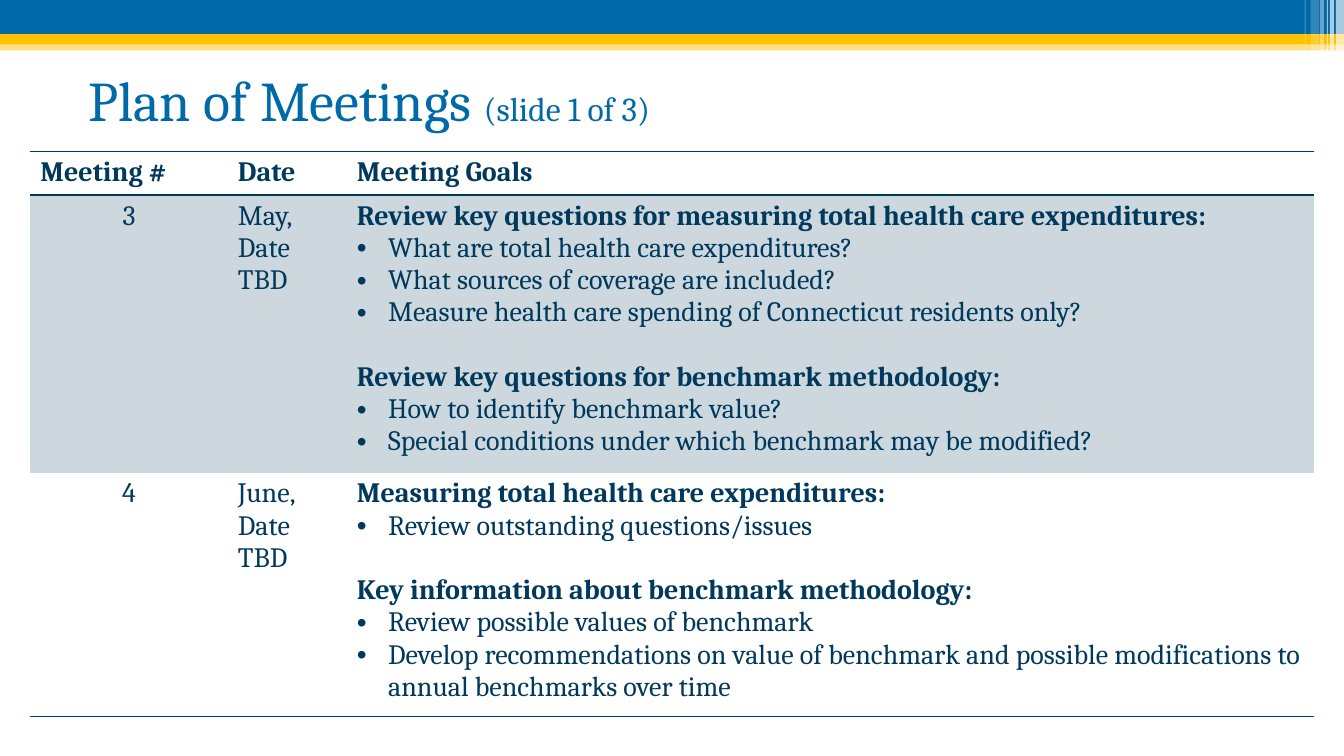
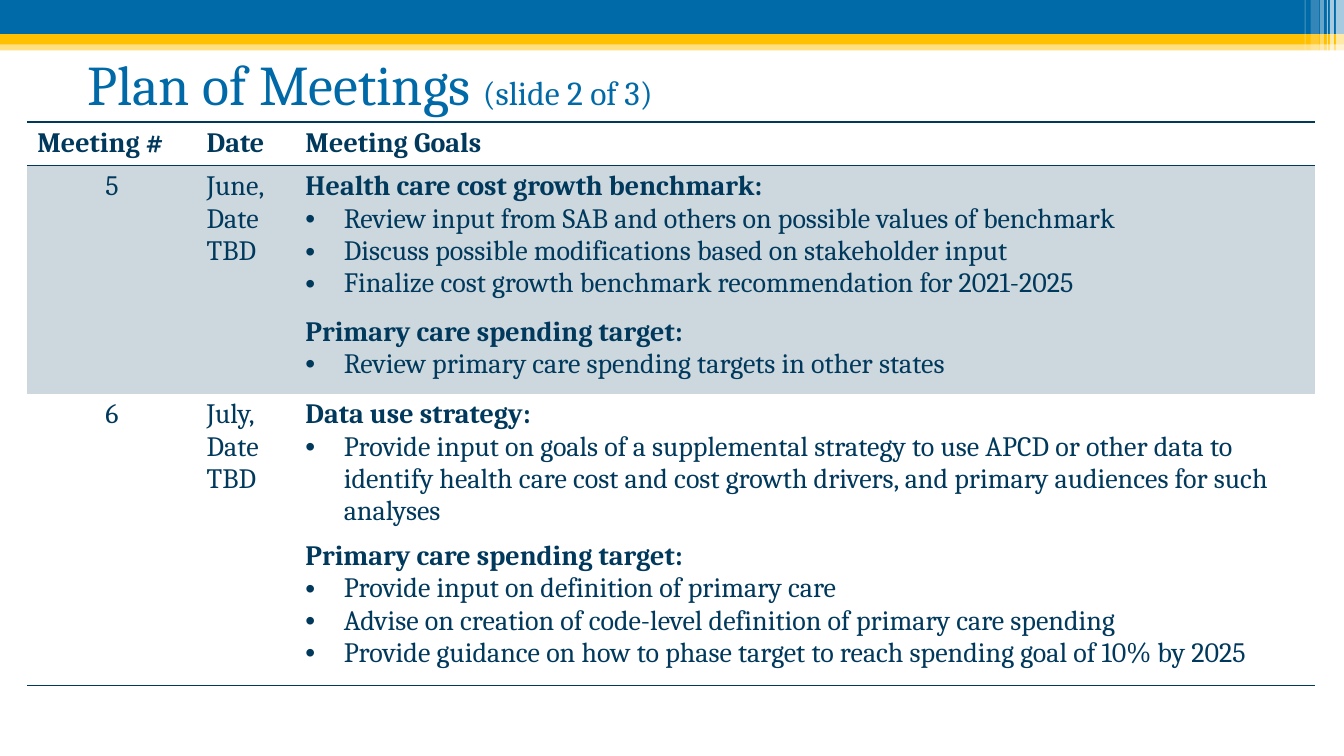
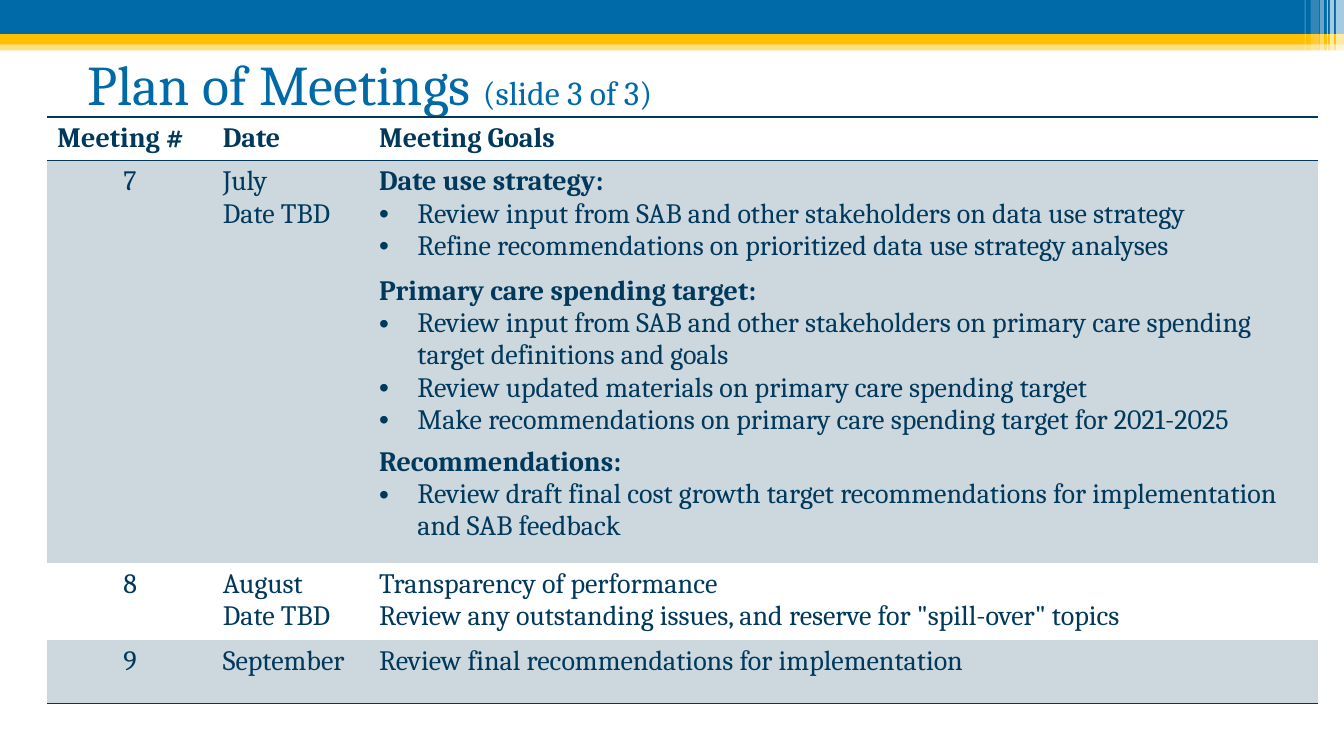
"""Build the three Plan of Meetings slides."""
from lxml import etree
from pptx import Presentation
from pptx import util as u
from pptx.dml import color as c
from pptx.enum import shapes, text
from pptx.oxml import ns

BLUE = c.RGBColor(0x00, 0x69, 0xA7)
GOLD = c.RGBColor(0xFF, 0xC0, 0x00)
WHITE = c.RGBColor(0xFF, 0xFF, 0xFF)
NAVY = c.RGBColor(0x00, 0x39, 0x5C)
SHADE = c.RGBColor(0xCC, 0xD7, 0xDE)

TITLE = {"name": "Cambria", "size": u.Pt(40), "color": BLUE}
SUBTITLE = {**TITLE, "size": u.Pt(24)}
BODY = {"name": "Cambria", "size": u.Pt(20), "color": NAVY, "bold": False}
HEADING = {**BODY, "bold": True}

NO_STYLE = "{2D5ABB26-0587-4C30-8999-92F81FD0307C}"
WIDTH = 13.33
BANDS = [(0.4, 0.1, GOLD, 50), (0, 0.34, BLUE, 100), (0.34, 0.1, GOLD, 100)]
STRIPES = [(13.25, 0.08, 0.68, 65), (13.19, 0.04, 0.68, 65),
           (13.16, 0.01, 0.68, 60), (13.09, 0.04, 0.68, 40),
           (13, 0.08, 0.64, 20), (12.94, 0.01, 0.64, 30)]

HEADER = ("Meeting #", ["Date"], [(0, "Meeting Goals", [])])

SLIDES = [
    {"title": (0.78, 0.4), "at": (0.3, 1.5), "indent": 0.31,
     "cols": [1.96, 1.18, 9.59], "heights": [0.42, 2.66, 2.34],
     "rows": [
         ("3", ["May,", "Date TBD"], [
             (0, "Review key questions for measuring total health care expenditures:", [
                 "What are total health care expenditures?",
                 "What sources of coverage are included?",
                 "Measure health care spending of Connecticut residents only?"]),
             (23, "Review key questions for benchmark methodology:", [
                 "How to identify benchmark value?",
                 "Special conditions under which benchmark may be modified?"])]),
         ("4", ["June,", "Date", "TBD"], [
             (0, "Measuring total health care expenditures:", [
                 "Review outstanding questions/issues"]),
             (23, "Key information about benchmark methodology:", [
                 "Review possible values of benchmark",
                 "Develop recommendations on value of benchmark and possible "
                 "modifications to annual benchmarks over time"])])]},
    {"title": (0.77, 0.24), "at": (0.27, 1.21), "indent": 0.38,
     "cols": [1.68, 0.98, 10.11], "heights": [0.42, 2.18, 2.79],
     "rows": [
         ("5", ["June,", "Date", "TBD"], [
             (0, "Health care cost growth benchmark:", [
                 "Review input from SAB and others on possible values of benchmark",
                 "Discuss possible modifications based on stakeholder input",
                 "Finalize cost growth benchmark recommendation for 2021-2025"]),
             (11.5, "Primary care spending target:", [
                 "Review primary care spending targets in other states"])]),
         ("6", ["July,", "Date", "TBD"], [
             (0, "Data use strategy:", [
                 "Provide input on goals of a supplemental strategy to use APCD or "
                 "other data to identify health care cost and cost growth drivers, "
                 "and primary audiences for such analyses"]),
             (9, "Primary care spending target:", [
                 "Provide input on definition of primary care",
                 "Advise on creation of code-level definition of primary care spending",
                 "Provide guidance on how to phase target to reach spending goal "
                 "of 10% by 2025"])])]},
    {"title": (0.77, 0.24), "at": (0.47, 1.16), "indent": 0.38,
     "cols": [1.64, 1.55, 9.41], "heights": [0.42, 3.84, 0.75, 0.63],
     "rows": [
         ("7", ["July", "Date TBD"], [
             (0, "Date use strategy:", [
                 "Review input from SAB and other stakeholders on data use strategy",
                 "Refine recommendations on prioritized data use strategy analyses"]),
             (9, "Primary care spending target:", [
                 "Review input from SAB and other stakeholders on primary care "
                 "spending target definitions and goals",
                 "Review updated materials on primary care spending target",
                 "Make recommendations on primary care spending target for 2021-2025"]),
             (7, "Recommendations:", [
                 "Review draft final cost growth target recommendations for "
                 "implementation and SAB feedback"])]),
         ("8", ["August", "Date TBD"], [
             "Transparency of performance",
             'Review any outstanding issues, and reserve for "spill-over" topics']),
         ("9", ["September"], ["Review final recommendations for implementation"])]},
]


def add_run(p, words, fmt):
    """Add a run and set its font from a dict."""
    r = p.add_run()
    r.text = words
    for key, value in fmt.items():
        if key == "color":
            r.font.color.rgb = value
        else:
            setattr(r.font, key, value)


def add_bar(s, left, top, width, height, color, opacity):
    """Add a plain rectangle with the given opacity in percent."""
    sp = s.shapes.add_shape(shapes.MSO_SHAPE.RECTANGLE,
                            *map(u.Inches, (left, top, width, height)))
    sp.shadow.inherit = False
    sp.line.fill.background()
    sp.fill.solid()
    sp.fill.fore_color.rgb = color
    if opacity < 100:
        tone = sp._element.spPr.find(ns.qn("a:solidFill"))[0]
        etree.SubElement(tone, ns.qn("a:alpha"), val=str(opacity * 1000))


def add_bands(s):
    """Draw the top bands and the pale stripes at their right end."""
    for top, height, color, opacity in BANDS:
        add_bar(s, 0, top, WIDTH, height, color, opacity)
    for left, width, height, opacity in STRIPES:
        add_bar(s, left, 0, width, height, WHITE, opacity)


def add_title(s, left, top, number):
    """Add the title with its slide count."""
    tf = s.shapes.add_textbox(*map(u.Inches, (left, top, 12, 1.17))).text_frame
    tf.word_wrap = True
    tf.vertical_anchor = text.MSO_ANCHOR.MIDDLE
    p = tf.paragraphs[0]
    add_run(p, "Plan of Meetings ", TITLE)
    add_run(p, f"(slide {number} of {len(SLIDES)})", SUBTITLE)


def add_bullet(p, indent):
    """Give a paragraph a hanging bullet."""
    pPr = p._p.get_or_add_pPr()
    pPr.set("marL", str(u.Inches(indent)))
    pPr.set("indent", str(-u.Inches(indent)))
    etree.SubElement(pPr, ns.qn("a:buFont"), typeface="Arial")
    etree.SubElement(pPr, ns.qn("a:buChar"), char="•")


def write_cell(cell, items, fmt, indent):
    """Write plain lines, or sections of gap, heading and bullets."""
    lines = []
    for item in items:
        if isinstance(item, str):
            lines.append((item, fmt, 0, False))
        else:
            gap, heading, bullets = item
            lines.append((heading, HEADING, gap, False))
            lines += [(bullet, BODY, 0, True) for bullet in bullets]
    tf = cell.text_frame
    for i, (words, style, gap, bulleted) in enumerate(lines):
        p = tf.add_paragraph() if i else tf.paragraphs[0]
        if bulleted:
            add_bullet(p, indent)
        if gap:
            p.space_before = u.Pt(gap)
        add_run(p, words, style)


def add_border(cell, side):
    """Draw a one-point navy line on one side of a cell."""
    tcPr = cell._tc.get_or_add_tcPr()
    ln = etree.SubElement(tcPr, ns.qn(f"a:{side}"), w=str(u.Pt(1)))
    fill = etree.SubElement(ln, ns.qn("a:solidFill"))
    etree.SubElement(fill, ns.qn("a:srgbClr"), val=str(NAVY))


def add_meetings(s, at, cols, heights, rows, indent):
    """Add the table of meetings, with every other row shaded."""
    rows = [HEADER, *rows]
    frame = s.shapes.add_table(len(rows), len(cols), *map(
        u.Inches, (*at, sum(cols), sum(heights))))
    table = frame.table
    table._tbl.tblPr.find(ns.qn("a:tableStyleId")).text = NO_STYLE
    for column, width in zip(table.columns, cols):
        column.width = u.Inches(width)
    for i, (number, dates, goals) in enumerate(rows):
        table.rows[i].height = u.Inches(heights[i])
        for j, items in enumerate(([number], dates, goals)):
            cell = table.cell(i, j)
            write_cell(cell, items, BODY if i else HEADING, indent)
            if i == 0:
                add_border(cell, "lnT")
            if i in (0, len(rows) - 1):
                add_border(cell, "lnB")
            if i % 2:
                cell.fill.solid()
                cell.fill.fore_color.rgb = SHADE
            else:
                cell.fill.background()
        if i:
            p = table.cell(i, 0).text_frame.paragraphs[0]
            p.alignment = text.PP_ALIGN.CENTER


def main():
    """Build and save the presentation."""
    prs = Presentation()
    prs.slide_width, prs.slide_height = u.Inches(WIDTH), u.Inches(7.5)
    for number, plan in enumerate(SLIDES, 1):
        s = prs.slides.add_slide(prs.slide_layouts[6])
        add_bands(s)
        add_title(s, *plan["title"], number)
        add_meetings(s, plan["at"], plan["cols"], plan["heights"],
                     plan["rows"], plan["indent"])
    prs.save("out.pptx")


if __name__ == "__main__":
    main()
